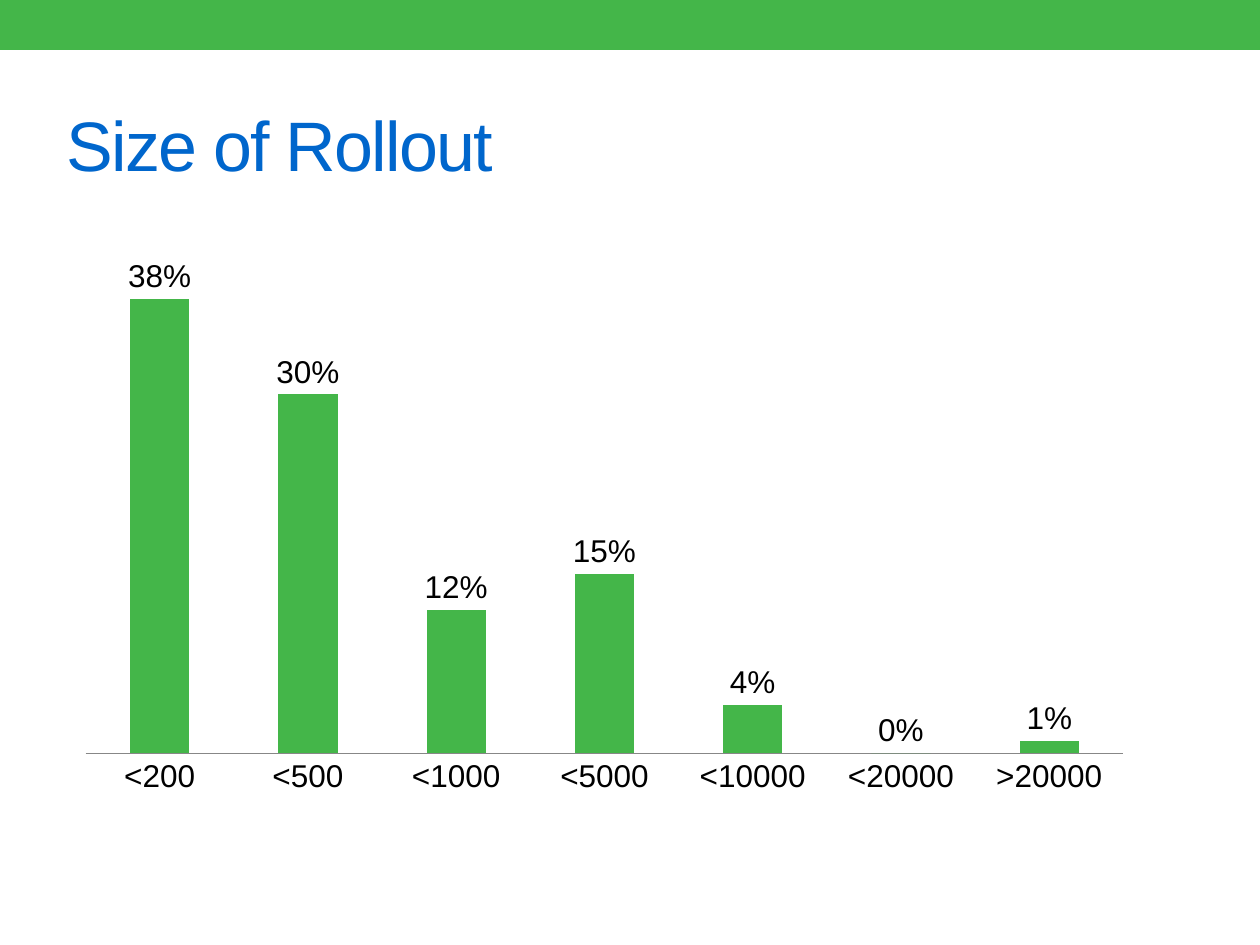
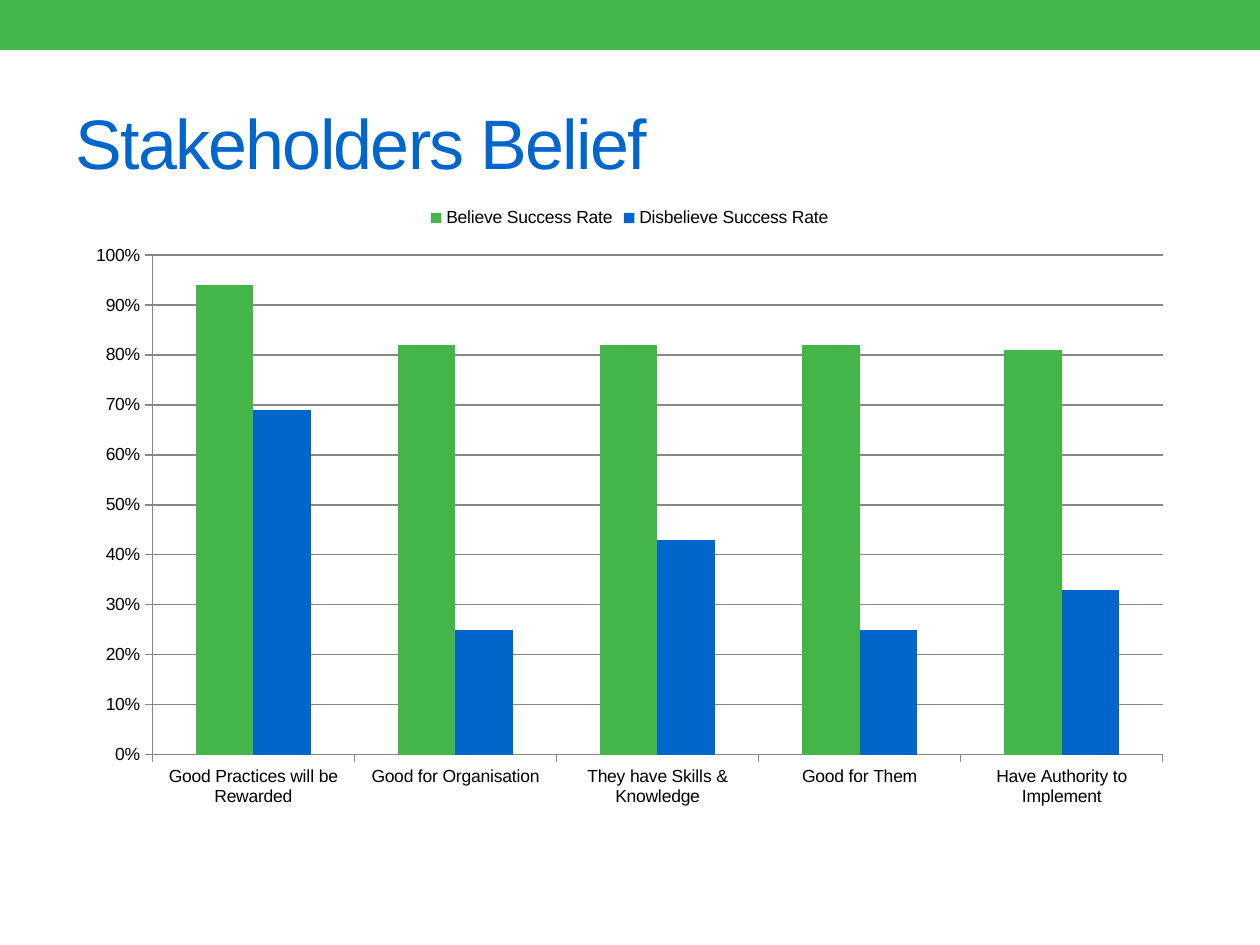
from dataclasses import dataclass

from pptx import Presentation
from pptx import util as u
from pptx.chart.data import CategoryChartData
from pptx.dml.color import RGBColor
from pptx.enum import chart as ch
from pptx.enum import shapes, text


@dataclass(frozen=True)
class Theme:
    green: str = "44B649"
    blue: str = "0066CC"
    black: str = "000000"
    grey: str = "878787"
    font: str = "Arial"
    title_size: int = 40
    large_chart_size: int = 18
    small_chart_size: int = 10


THEME = Theme()
PX_PER_INCH = 126
SLIDE_W, SLIDE_H = 1260, 945
BAND_H = 50
TITLE_W, TITLE_H = 1134, 136


def px(length):
    return u.Emu(round(length * u.Inches(1) / PX_PER_INCH))


def box(*lengths):
    return [px(length) for length in lengths]


def paint(fill, color):
    fill.solid()
    fill.fore_color.rgb = RGBColor.from_string(color)


def format_font(font, size, color):
    font.name = THEME.font
    font.size = u.Pt(size)
    font.color.rgb = RGBColor.from_string(color)


def write_text(frame, words, *, size, color, spacing=0, align=text.PP_ALIGN.LEFT,
               anchor=text.MSO_ANCHOR.MIDDLE):
    frame.word_wrap = True
    frame.auto_size = text.MSO_AUTO_SIZE.NONE
    frame.vertical_anchor = anchor
    paragraph = frame.paragraphs[0]
    paragraph.alignment = align
    run = paragraph.add_run()
    run.text = words
    format_font(run.font, size, color)
    # Letter spacing is in hundredths of a point
    run._r.get_or_add_rPr().set("spc", str(spacing * 100))


def add_band(slide):
    band = slide.shapes.add_shape(shapes.MSO_SHAPE.RECTANGLE, *box(0, 0, SLIDE_W, BAND_H))
    band.shadow.inherit = False
    paint(band.fill, THEME.green)
    band.line.fill.background()


def add_titled_slide(deck, words, left, top):
    slide = deck.slides.add_slide(deck.slide_layouts[5])
    add_band(slide)
    title = slide.shapes.title
    title.left, title.top, title.width, title.height = box(left, top, TITLE_W, TITLE_H)
    write_text(title.text_frame, words, size=THEME.title_size, color=THEME.blue, spacing=-1)
    return slide


def draw_line(line):
    line.width = u.Pt(0.75)
    line.color.rgb = RGBColor.from_string(THEME.grey)


def add_column_chart(slide, place, categories, series, *, size, top_value, tick, overlap=0):
    """series maps each name to its values and colour."""
    data = CategoryChartData(number_format="0%")
    data.categories = categories
    for name, (values, _) in series.items():
        data.add_series(name, values)
    chart = slide.shapes.add_chart(ch.XL_CHART_TYPE.COLUMN_CLUSTERED, *box(*place), data).chart
    chart.has_title = False
    chart.has_legend = False
    format_font(chart.font, size, THEME.black)

    columns = chart.plots[0]
    columns.gap_width = 150
    columns.overlap = overlap
    columns.vary_by_categories = False
    for column, (_, color) in zip(columns.series, series.values()):
        paint(column.format.fill, color)
        column.invert_if_negative = False

    for axis in (chart.category_axis, chart.value_axis):
        axis.major_tick_mark = tick
        axis.minor_tick_mark = ch.XL_TICK_MARK.NONE
        draw_line(axis.format.line)
    scale = chart.value_axis
    scale.minimum_scale, scale.maximum_scale, scale.major_unit = 0, top_value, 0.1
    scale.has_major_gridlines = False
    scale.tick_labels.number_format = "0%"
    scale.tick_labels.number_format_is_linked = False
    return chart


def label_columns(chart, size):
    chart.value_axis.visible = False
    columns = chart.plots[0]
    columns.has_data_labels = True
    labels = columns.data_labels
    labels.show_value = True
    labels.number_format = "0%"
    labels.number_format_is_linked = False
    labels.position = ch.XL_LABEL_POSITION.OUTSIDE_END
    format_font(labels.font, size, THEME.black)


def add_grid_and_legend(chart, size):
    chart.value_axis.has_major_gridlines = True
    draw_line(chart.value_axis.major_gridlines.format.line)
    chart.has_legend = True
    chart.legend.position = ch.XL_LEGEND_POSITION.TOP
    chart.legend.include_in_layout = False
    format_font(chart.legend.font, size, THEME.black)


def add_rollout_slide(deck):
    slide = add_titled_slide(deck, "Size of Rollout", 54, 76)
    sizes = ["<200", "<500", "<1000", "<5000", "<10000", "<20000", ">20000"]
    shares = [0.38, 0.30, 0.12, 0.15, 0.04, 0, 0.01]
    rollout = add_column_chart(
        slide, (64, 142, 1081, 665), sizes, {"Series 1": (shares, THEME.green)},
        size=THEME.large_chart_size, top_value=0.5, tick=ch.XL_TICK_MARK.NONE, overlap=-25)
    label_columns(rollout, THEME.large_chart_size)


def add_belief_slide(deck):
    slide = add_titled_slide(deck, "Stakeholders Belief", 63, 73)
    beliefs = ["Good Practices will be Rewarded", "Good for Organisation",
               "They have Skills & Knowledge", "Good for Them", "Have Authority to Implement"]
    success_rates = {
        "Believe Success Rate": ([0.94, 0.82, 0.82, 0.82, 0.81], THEME.green),
        "Disbelieve Success Rate": ([0.69, 0.25, 0.43, 0.25, 0.33], THEME.blue),
    }
    belief = add_column_chart(
        slide, (74, 194, 1111, 625), beliefs, success_rates,
        size=THEME.small_chart_size, top_value=1, tick=ch.XL_TICK_MARK.OUTSIDE)
    add_grid_and_legend(belief, THEME.small_chart_size)


def main():
    deck = Presentation()
    deck.slide_width, deck.slide_height = box(SLIDE_W, SLIDE_H)
    add_rollout_slide(deck)
    add_belief_slide(deck)
    deck.save("out.pptx")


if __name__ == "__main__":
    main()
